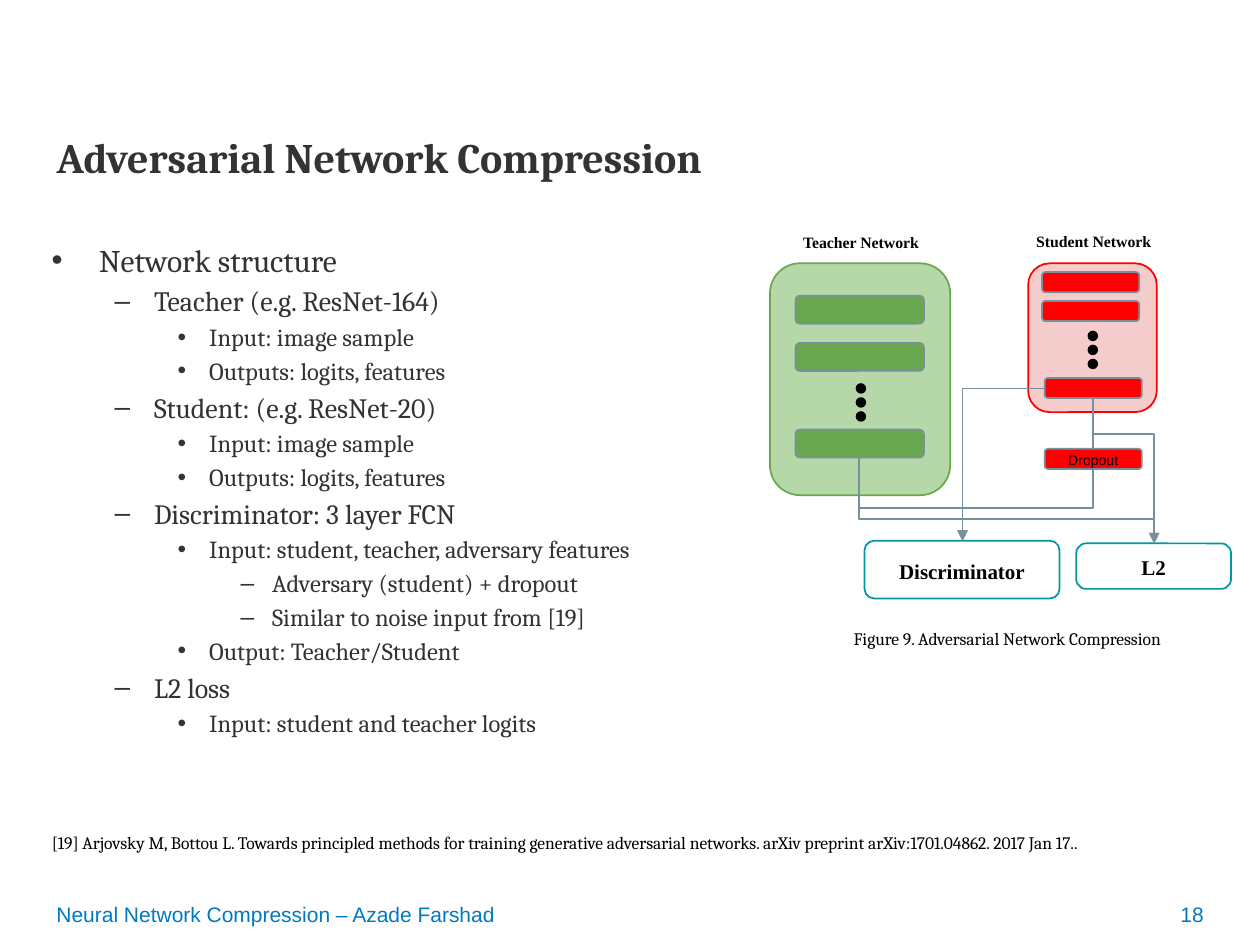
from lxml import etree
from pptx import Presentation
from pptx.dml.color import RGBColor
from pptx.enum.shapes import MSO_CONNECTOR, MSO_SHAPE
from pptx.enum.text import MSO_ANCHOR, MSO_AUTO_SIZE, PP_ALIGN
from pptx.oxml.ns import qn
from pptx.util import Pt

ELBOW = MSO_CONNECTOR.ELBOW
ROUNDED, OVAL = MSO_SHAPE.ROUNDED_RECTANGLE, MSO_SHAPE.OVAL
TOP, MIDDLE = MSO_ANCHOR.TOP, MSO_ANCHOR.MIDDLE
LEFT, CENTER, RIGHT = PP_ALIGN.LEFT, PP_ALIGN.CENTER, PP_ALIGN.RIGHT

BLACK = RGBColor(0x00, 0x00, 0x00)
WHITE = RGBColor(0xFF, 0xFF, 0xFF)
INK = RGBColor(0x33, 0x33, 0x33)
BLUE = RGBColor(0x00, 0x79, 0xC1)
TEAL = RGBColor(0x00, 0x97, 0xA7)
SLATE = RGBColor(0x78, 0x90, 0x9C)
GREEN = RGBColor(0x6A, 0xA8, 0x4F)
PALE_GREEN = RGBColor(0xB6, 0xD7, 0xA8)
RED = RGBColor(0xFF, 0x00, 0x00)
PALE_RED = RGBColor(0xF4, 0xCC, 0xCC)

SERIF, SANS, LABEL = "Cambria", "Arial", "Times New Roman"

TITLE = "Adversarial Network Compression"
OUTLINE = [
    (0, "Network structure"),
    (1, "Teacher (e.g. ResNet-164)"),
    (2, "Input: image sample"),
    (2, "Outputs: logits, features"),
    (1, "Student: (e.g. ResNet-20)"),
    (2, "Input: image sample"),
    (2, "Outputs: logits, features"),
    (1, "Discriminator: 3 layer FCN"),
    (2, "Input: student, teacher, adversary features"),
    (3, "Adversary (student) + dropout"),
    (3, "Similar to noise input from [19]"),
    (2, "Output: Teacher/Student"),
    (1, "L2 loss"),
    (2, "Input: student and teacher logits"),
]
LEVELS = [(18, 27, 27), (16, 58.5, 22.5), (14, 90, 18), (14, 126, 18)]

# text, box, font, size, bold, color, alignment, anchor, vertical inset
TEXTS = [
    ("Neural Network Compression – Azade Farshad", (25.2, 510.5, 493, 24),
     SANS, 12, False, BLUE, LEFT, MIDDLE, 3.6),
    ("18", (649.5, 510.5, 45.5, 24), SANS, 12, False, BLUE, RIGHT, MIDDLE, 3.6),
    ("Figure 9. Adversarial Network Compression", (461, 353.5, 229, 11),
     SERIF, 10, False, BLACK, CENTER, TOP, 7.2),
    ("Teacher Network", (447.5, 129.6, 89, 21), LABEL, 9, True, BLACK, CENTER, TOP, 3.6),
    ("Student Network", (580.5, 129, 89, 21), LABEL, 9, True, BLACK, CENTER, TOP, 3.6),
    ("[19] Arjovsky M, Bottou L. Towards principled methods for training generative "
     "adversarial networks. arXiv preprint arXiv:1701.04862. 2017 Jan 17..",
     (22.5, 468.5, 694, 35.5), SERIF, 10, False, BLACK, LEFT, TOP, 7.2),
]

NETWORKS = [
    {"box": (440, 150.5, 103, 132.5), "fill": PALE_GREEN, "color": GREEN,
     "bar_size": (73.5, 16), "bars": [(454.5, 169), (454.5, 196), (454.5, 245.5)],
     "dots": (489.5, 219.5)},
    {"box": (587.5, 150.5, 73.5, 85), "fill": PALE_RED, "color": RED,
     "bar_size": (55.5, 11.5), "bars": [(595.5, 155.5), (595.5, 172), (597, 216)],
     "dots": (622, 189.5)},
]
DOT_SIZE, DOT_STEP = 5, 8

LOSSES = [("Discriminator", (494, 309, 111.5, 33), 0.167),
          ("L2", (615, 310.5, 88.5, 26), 0.219)]
DROPOUT = ("Dropout", (597, 256.5, 55.5, 11.5))

# start, end, share of the drop before the turn
DROPS = [
    ((491, 261.5), (550, 309), 0.61),
    ((624.5, 227.5), (550, 309), 0.77),
    ((491, 283), (659.5, 310.5), 0.5),
    ((624.5, 237), (659.5, 310.5), 0.15),
]
CORNER = ((597, 222), (550, 309))


def add_run(paragraph, text, font, size, color, bold=False):
    run = paragraph.add_run()
    run.text = text
    run.font.name, run.font.size, run.font.bold = font, Pt(size), bold
    run.font.color.rgb = color


def place(shape, box):
    shape.left, shape.top, shape.width, shape.height = (Pt(value) for value in box)


def set_frame(frame, anchor, inset=3.6):
    frame.word_wrap, frame.auto_size = True, MSO_AUTO_SIZE.NONE
    frame.vertical_anchor = anchor
    frame.margin_left = frame.margin_right = Pt(7.2)
    frame.margin_top = frame.margin_bottom = Pt(inset)


def add_box(slide, kind, box, fill, line, radius=0.167):
    shape = slide.shapes.add_shape(kind, *(Pt(value) for value in box))
    shape.shadow.inherit = False
    shape.fill.solid()
    shape.fill.fore_color.rgb = fill
    shape.line.color.rgb, shape.line.width = line, Pt(1)
    if kind == ROUNDED:
        shape.adjustments[0] = radius
    return shape


def label(shape, text, font, size, bold):
    set_frame(shape.text_frame, MIDDLE)
    paragraph = shape.text_frame.paragraphs[0]
    paragraph.alignment, paragraph.line_spacing = CENTER, 1.1
    add_run(paragraph, text, font, size, BLACK, bold)


def add_elbow(slide, start, end):
    connector = slide.shapes.add_connector(ELBOW, *(Pt(value) for value in start + end))
    connector.line.color.rgb, connector.line.width = SLATE, Pt(1)
    properties = connector._element.spPr
    line = properties.find(qn("a:ln"))
    etree.SubElement(line, qn("a:tailEnd"), type="triangle")
    etree.SubElement(properties, qn("a:effectLst"))
    return properties


def add_drop(slide, start, end, share):
    center_x, center_y = (start[0] + end[0]) / 2, (start[1] + end[1]) / 2
    half_x, half_y = abs(end[0] - start[0]) / 2, (end[1] - start[1]) / 2
    side = 1 if end[0] > start[0] else -1
    properties = add_elbow(slide, (center_x + side * half_y, center_y - half_x),
                           (center_x - side * half_y, center_y + half_x))
    degrees = 270 if side > 0 else 90
    properties.find(qn("a:xfrm")).set("rot", str(degrees * 60000))
    geometry = properties.find(qn("a:prstGeom"))
    guides = geometry.find(qn("a:avLst"))
    if guides is None:
        guides = etree.SubElement(geometry, qn("a:avLst"))
    etree.SubElement(guides, qn("a:gd"), name="adj1", fmla=f"val {round(share * 100000)}")


def add_outline(slide):
    title, body = slide.shapes.title, slide.placeholders[1]
    place(title, (25.2, 71.3, 669, 68.4))
    set_frame(title.text_frame, TOP)
    heading = title.text_frame.paragraphs[0]
    heading.alignment = LEFT
    add_run(heading, TITLE, SERIF, 24, INK, True)
    place(body, (22.3, 131, 370, 330))
    frame = body.text_frame
    set_frame(frame, TOP)
    for index, (level, text) in enumerate(OUTLINE):
        paragraph = frame.add_paragraph() if index else frame.paragraphs[0]
        size, margin, hanging = LEVELS[level]
        paragraph.level, paragraph.line_spacing = level, 1.15
        paragraph.space_before = Pt(0)
        properties = paragraph._p.get_or_add_pPr()
        properties.set("marL", str(Pt(margin)))
        properties.set("indent", str(-Pt(hanging)))
        add_run(paragraph, text, SERIF, size, INK)


def add_network(slide, network):
    add_box(slide, ROUNDED, network["box"], network["fill"], network["color"])
    for corner in network["bars"]:
        add_box(slide, ROUNDED, corner + network["bar_size"], network["color"], SLATE)
    left, top = network["dots"]
    for index in range(3):
        add_box(slide, OVAL, (left, top + index * DOT_STEP, DOT_SIZE, DOT_SIZE), BLACK, BLACK)


def main():
    presentation = Presentation()
    presentation.slide_width, presentation.slide_height = Pt(720), Pt(540)
    slide = presentation.slides.add_slide(presentation.slide_layouts[1])
    add_outline(slide)
    for text, box, font, size, bold, color, alignment, anchor, inset in TEXTS:
        shape = slide.shapes.add_textbox(*(Pt(value) for value in box))
        set_frame(shape.text_frame, anchor, inset)
        paragraph = shape.text_frame.paragraphs[0]
        paragraph.alignment = alignment
        add_run(paragraph, text, font, size, color, bold)
    for network in NETWORKS:
        add_network(slide, network)
    for text, box, radius in LOSSES:
        label(add_box(slide, ROUNDED, box, WHITE, TEAL, radius), text, LABEL, 12, True)
    for start, end, share in DROPS:
        add_drop(slide, start, end, share)
    add_elbow(slide, *CORNER).find(qn("a:prstGeom")).set("prst", "bentConnector2")
    text, box = DROPOUT
    label(add_box(slide, ROUNDED, box, RED, SLATE), text, SANS, 8, False)
    presentation.save("out.pptx")


if __name__ == "__main__":
    main()
